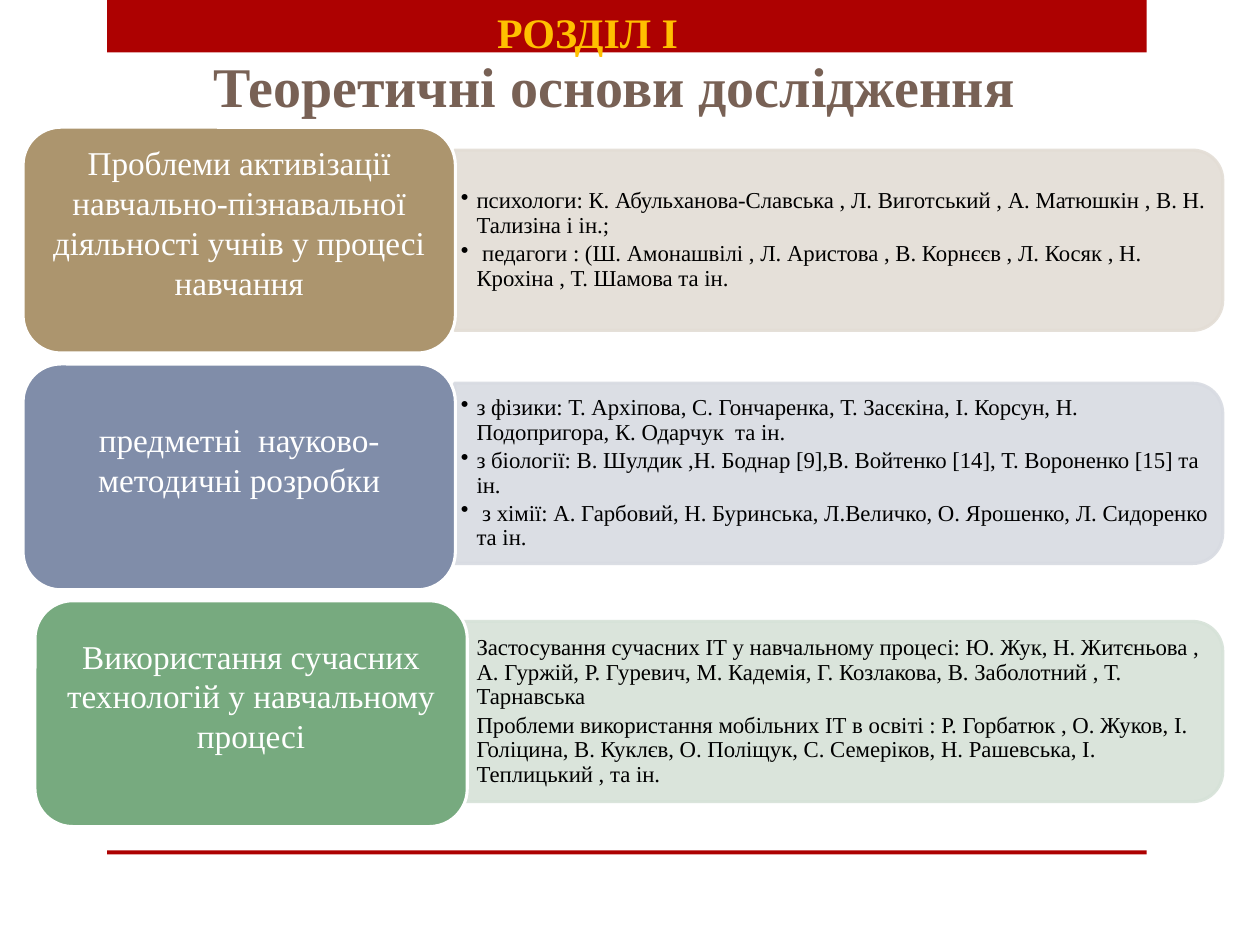
from lxml import etree
from pptx import Presentation
from pptx.dml.color import RGBColor
from pptx.enum.shapes import MSO_SHAPE
from pptx.enum.text import MSO_ANCHOR, PP_ALIGN
from pptx.oxml.ns import qn
from pptx.util import Pt

RECTANGLE = MSO_SHAPE.RECTANGLE
ROUNDED = MSO_SHAPE.ROUNDED_RECTANGLE
ROUND_TOP = MSO_SHAPE.ROUND_2_SAME_RECTANGLE
MIDDLE = MSO_ANCHOR.MIDDLE
CENTER, LEFT = PP_ALIGN.CENTER, PP_ALIGN.LEFT

FONT = "Times New Roman"
COLORS = {
    "red": "AD0101", "gold": "FFC000", "brown": "786155",
    "white": "FFFFFF", "black": "000000",
    "sand": "AC956E", "sand light": "E3DDD5",
    "blue": "808DA9", "blue light": "D8DBE2",
    "green": "77AA7F", "green light": "D6E2D8",
}

presentation = Presentation()
presentation.slide_width, presentation.slide_height = Pt(720), Pt(540)
slide = presentation.slides.add_slide(presentation.slide_layouts[6])


def add_block(kind, left, top, width, height, fill, line=None):
    shape = slide.shapes.add_shape(kind, Pt(left), Pt(top), Pt(width), Pt(height))
    shape.shadow.inherit = False
    shape.fill.solid()
    shape.fill.fore_color.rgb = RGBColor.from_string(COLORS[fill])
    if line:
        shape.line.color.rgb = RGBColor.from_string(COLORS[line])
        shape.line.width = Pt(1.75)
    else:
        shape.line.fill.background()
    return shape


def write(shape, text, size, color, align=CENTER, bold=False, insets=None):
    frame = shape.text_frame
    frame.word_wrap = True
    if insets:
        side, top, bottom = insets
        frame.margin_left = frame.margin_right = Pt(side)
        frame.margin_top, frame.margin_bottom = Pt(top), Pt(bottom)
        frame.vertical_anchor = MIDDLE
    frame.text = text
    for paragraph in frame.paragraphs:
        paragraph.alignment = align
        for run in paragraph.runs:
            run.font.name = FONT
            run.font.size = Pt(size)
            run.font.bold = bold
            run.font.color.rgb = RGBColor.from_string(COLORS[color])
    return frame


# Red band at the top and thin rule at the bottom
add_block(RECTANGLE, 61.2, 0, 594, 30, "red")
add_block(RECTANGLE, 61.2, 486, 594, 2.2, "red")

# Headings
title = slide.shapes.add_textbox(Pt(1.5), Pt(26), Pt(699), Pt(46))
write(title, "Теоретичні основи дослідження", 32, "brown", bold=True)
chapter = slide.shapes.add_textbox(Pt(137.5), Pt(0), Pt(396.5), Pt(36))
write(chapter, "РОЗДІЛ І", 24, "gold", bold=True)

# Rows: colour, box left, panel centre, topic, authors
rows = [
    ("sand", 13.2, 137.3,
     "Проблеми активізації навчально-пізнавальної діяльності учнів у процесі навчання",
     ["психологи: К. Абульханова-Славська , Л. Виготський , А. Матюшкін , В. Н. Тализіна і ін.;",
      " педагоги : (Ш. Амонашвілі , Л. Аристова , В. Корнєєв , Л. Косяк , Н. Крохіна , Т. Шамова та ін."]),
    ("blue", 13.2, 270.5,
     "предметні  науково-методичні розробки",
     ["з фізики: Т. Архіпова, С. Гончаренка, Т. Засєкіна, І. Корсун, Н. Подопригора, К. Одарчук  та ін.",
      "з біології: В. Шулдик ,Н. Боднар [9],В. Войтенко [14], Т. Вороненко [15] та ін.",
      " з хімії: А. Гарбовий, Н. Буринська, Л.Величко, О. Ярошенко, Л. Сидоренко та ін."]),
    ("green", 20, 406.6,
     "Використання сучасних технологій у навчальному процесі",
     ["Застосування сучасних ІТ у навчальному процесі: Ю. Жук, Н. Житєньова , А. Гуржій, Р. Гуревич, "
      "М. Кадемія, Г. Козлакова, В. Заболотний , Т. Тарнавська",
      "Проблеми використання мобільних ІТ в освіті : Р. Горбатюк , О. Жуков, І. Голіцина, В. Куклєв, "
      "О. Поліщук, С. Семеріков, Н. Рашевська, І. Теплицький , та ін."]),
]
BOX_TOP, BOX_STEP, BOX_WIDTH, BOX_HEIGHT = 72.7, 135.3, 247, 129
PANEL_LEFT, PANEL_LENGTH, PANEL_DEPTH = 259.7, 439, 103
TEXT_WIDTH, TEXT_HEIGHT = 434, 93

for index, (color, box_left, center, topic, authors) in enumerate(rows):
    # Panel rounded on the right: a top-rounded shape turned a quarter
    panel = add_block(ROUND_TOP, PANEL_LEFT + (PANEL_LENGTH - PANEL_DEPTH) / 2,
                      center - PANEL_LENGTH / 2, PANEL_DEPTH, PANEL_LENGTH,
                      color + " light", color + " light")
    panel.rotation = 90
    for solid_color in panel._element.spPr.iter(qn("a:srgbClr")):
        etree.SubElement(solid_color, qn("a:alpha"), val="90000")

    # Bulleted authors
    author_list = slide.shapes.add_textbox(
        Pt(PANEL_LEFT), Pt(center - TEXT_HEIGHT / 2), Pt(TEXT_WIDTH), Pt(TEXT_HEIGHT))
    frame = write(author_list, "\n".join(authors), 13, "black", LEFT, insets=(3.6, 2, 2))
    for paragraph in frame.paragraphs:
        paragraph.line_spacing = 0.9
        paragraph.space_after = Pt(2)
        properties = paragraph._p.get_or_add_pPr()
        properties.set("marL", str(Pt(9)))
        properties.set("indent", str(-Pt(9)))
        etree.SubElement(properties, qn("a:buChar"), char="•")

    # Topic box, its text raised by a deeper bottom inset
    box = add_block(ROUNDED, box_left, BOX_TOP + index * BOX_STEP,
                    BOX_WIDTH, BOX_HEIGHT, color, "white")
    write(box, topic, 19, "white", insets=(5.7, 2.9, 23.4))

presentation.save("out.pptx")
